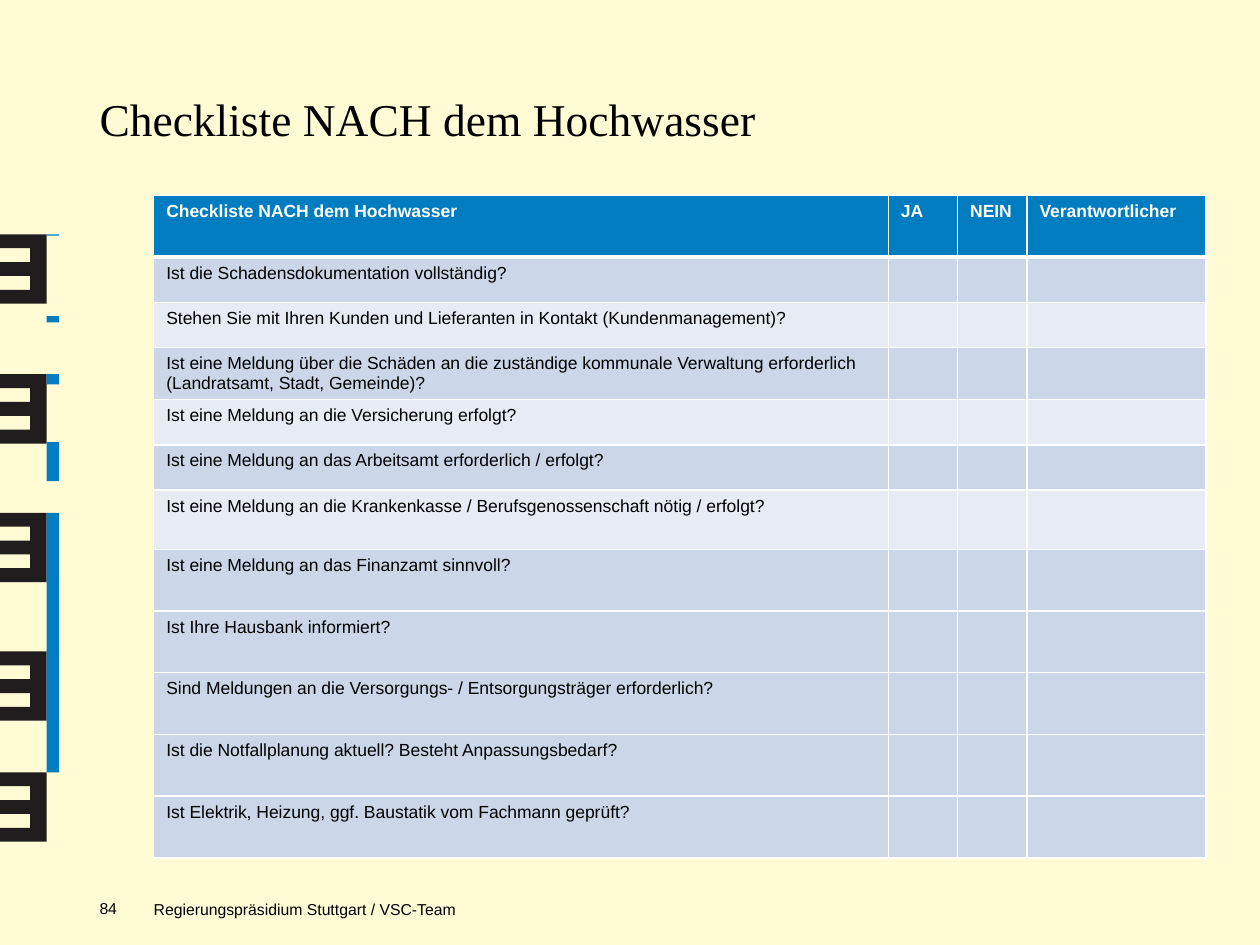
from dataclasses import dataclass

import lxml.etree
import pptx
import pptx.dml.color
import pptx.enum.shapes
import pptx.enum.text
import pptx.oxml.ns
import pptx.util

Inches = pptx.util.Inches
Pt = pptx.util.Pt


@dataclass(frozen=True)
class Theme:
    background: str = "FFFBD5"
    blue: str = "007DC0"
    dark: str = "211D1F"
    black: str = "000000"
    white: str = "FFFFFF"
    band_dark: str = "CBD7E8"
    band_light: str = "E7ECF4"
    title_font: str = "Times New Roman"
    body_font: str = "Arial"
    title_size: float = 26
    table_size: float = 10
    footer_size: float = 9


THEME = Theme()
TITLE = "Checkliste NACH dem Hochwasser"
HEADERS = [TITLE, "JA", "NEIN", "Verantwortlicher"]
QUESTIONS = [
    "Ist die Schadensdokumentation vollständig?",
    "Stehen Sie mit Ihren Kunden und Lieferanten in Kontakt (Kundenmanagement)?",
    "Ist eine Meldung über die Schäden an die zuständige kommunale Verwaltung "
    "erforderlich (Landratsamt, Stadt, Gemeinde)?",
    "Ist eine Meldung an die Versicherung erfolgt?",
    "Ist eine Meldung an das Arbeitsamt erforderlich / erfolgt?",
    "Ist eine Meldung an die Krankenkasse / Berufsgenossenschaft nötig / erfolgt?",
    "Ist eine Meldung an das Finanzamt sinnvoll?",
    "Ist Ihre Hausbank informiert?",
    "Sind Meldungen an die Versorgungs- / Entsorgungsträger erforderlich?",
    "Ist die Notfallplanung aktuell? Besteht Anpassungsbedarf?",
    "Ist Elektrik, Heizung, ggf. Baustatik vom Fachmann geprüft?",
]
LIGHT_ROWS = {2, 4, 6}
COLUMN_WIDTHS = [5.83, 0.55, 0.55, 1.42]
ROW_HEIGHTS = [0.49] + [0.36] * 5 + [0.47] + [0.49] * 5
COMB_TOPS = [1.86, 2.97, 4.07, 5.17, 6.13]
BLUE_BARS = [(1.86, 0.01), (2.51, 0.05), (2.97, 0.08), (3.51, 0.31), (4.07, 2.06)]
COMB_WIDTH = 0.37
COMB_NOTCH = 0.24
COMB_STEP = 0.11


def color(value):
    return pptx.dml.color.RGBColor.from_string(value)


def style_font(font, name, size, rgb, bold=False):
    font.name = name
    font.size = Pt(size)
    font.bold = bold
    font.color.rgb = color(rgb)


def paint(shape, rgb):
    shape.shadow.inherit = False
    shape.fill.solid()
    shape.fill.fore_color.rgb = color(rgb)
    shape.line.fill.background()


def add_bar(slide, top, height):
    bar = slide.shapes.add_shape(
        pptx.enum.shapes.MSO_SHAPE.RECTANGLE,
        Inches(COMB_WIDTH), Inches(top), Inches(0.1), Inches(height))
    paint(bar, THEME.blue)


def add_comb(slide, top):
    points = []
    for level in range(1, 5):
        edge = top + level * COMB_STEP
        sides = (0, COMB_NOTCH) if level % 2 else (COMB_NOTCH, 0)
        points += [(Inches(side), Inches(edge)) for side in sides]
    bottom = top + 5 * COMB_STEP
    points += [(0, Inches(bottom)), (Inches(COMB_WIDTH), Inches(bottom)),
               (Inches(COMB_WIDTH), Inches(top))]
    builder = slide.shapes.build_freeform(0, Inches(top))
    builder.add_line_segments(points, close=True)
    paint(builder.convert_to_shape(), THEME.dark)


def set_title(slide):
    title = slide.shapes.title
    title.left, title.top = Inches(0.79), Inches(0.72)
    title.width, title.height = Inches(8.86), Inches(0.94)
    fill_text(title.text_frame, TITLE, THEME.title_font, THEME.title_size)


def fill_text(frame, text, font_name, size, anchor=pptx.enum.text.MSO_ANCHOR.TOP, inset_top=0):
    frame.word_wrap = True
    frame.auto_size = pptx.enum.text.MSO_AUTO_SIZE.NONE
    frame.vertical_anchor = anchor
    frame.margin_left = frame.margin_right = frame.margin_bottom = 0
    frame.margin_top = Inches(inset_top)
    paragraph = frame.paragraphs[0]
    paragraph.text = text
    paragraph.alignment = pptx.enum.text.PP_ALIGN.LEFT
    style_font(paragraph.font, font_name, size, THEME.black)


def add_footer(slide, text, left, top, width, height, **options):
    box = slide.shapes.add_textbox(Inches(left), Inches(top), Inches(width), Inches(height))
    fill_text(box.text_frame, text, THEME.body_font, THEME.footer_size, **options)


def set_borders(cell, row):
    properties = cell._tc.get_or_add_tcPr()
    widths = {"lnL": 1, "lnR": 1, "lnT": 3 if row == 1 else 1, "lnB": 3 if row == 0 else 1}
    qn = pptx.oxml.ns.qn
    for side, width in widths.items():
        line = lxml.etree.SubElement(properties, qn(f"a:{side}"), w=str(Pt(width)))
        fill = lxml.etree.SubElement(line, qn("a:solidFill"))
        lxml.etree.SubElement(fill, qn("a:srgbClr"), val=THEME.white)


def format_cell(cell, text, row):
    header = row == 0
    set_borders(cell, row)
    cell.fill.solid()
    band = THEME.band_light if row in LIGHT_ROWS else THEME.band_dark
    cell.fill.fore_color.rgb = color(THEME.blue if header else band)
    paragraph = cell.text_frame.paragraphs[0]
    if text:
        paragraph.text = text
    else:
        lxml.etree.SubElement(
            paragraph._p, pptx.oxml.ns.qn("a:endParaRPr"), sz=str(THEME.table_size * 100))
    style_font(paragraph.font, THEME.body_font, THEME.table_size,
               THEME.white if header else THEME.black, header)


def add_checklist(slide):
    rows = [HEADERS] + [[question, "", "", ""] for question in QUESTIONS]
    table = slide.shapes.add_table(
        len(rows), len(HEADERS), Inches(1.22), Inches(1.55),
        Inches(sum(COLUMN_WIDTHS)), Inches(sum(ROW_HEIGHTS))).table
    for column, width in zip(table.columns, COLUMN_WIDTHS):
        column.width = Inches(width)
    for row, height in zip(table.rows, ROW_HEIGHTS):
        row.height = Inches(height)
    for row_index, texts in enumerate(rows):
        for column_index, text in enumerate(texts):
            format_cell(table.cell(row_index, column_index), text, row_index)


def main():
    presentation = pptx.Presentation()
    presentation.slide_width, presentation.slide_height = Inches(10), Inches(7.5)
    slide = presentation.slides.add_slide(presentation.slide_layouts[5])
    slide.background.fill.solid()
    slide.background.fill.fore_color.rgb = color(THEME.background)
    for top in COMB_TOPS:
        add_comb(slide, top)
    for top, height in BLUE_BARS:
        add_bar(slide, top, height)
    set_title(slide)
    add_checklist(slide)
    add_footer(slide, "Regierungspräsidium Stuttgart / VSC-Team", 1.22, 7.09, 3.54, 0.2,
               anchor=pptx.enum.text.MSO_ANCHOR.BOTTOM, inset_top=0.05)
    add_footer(slide, "84", 0.79, 7.13, 0.3, 0.28)
    presentation.save("out.pptx")


if __name__ == "__main__":
    main()
